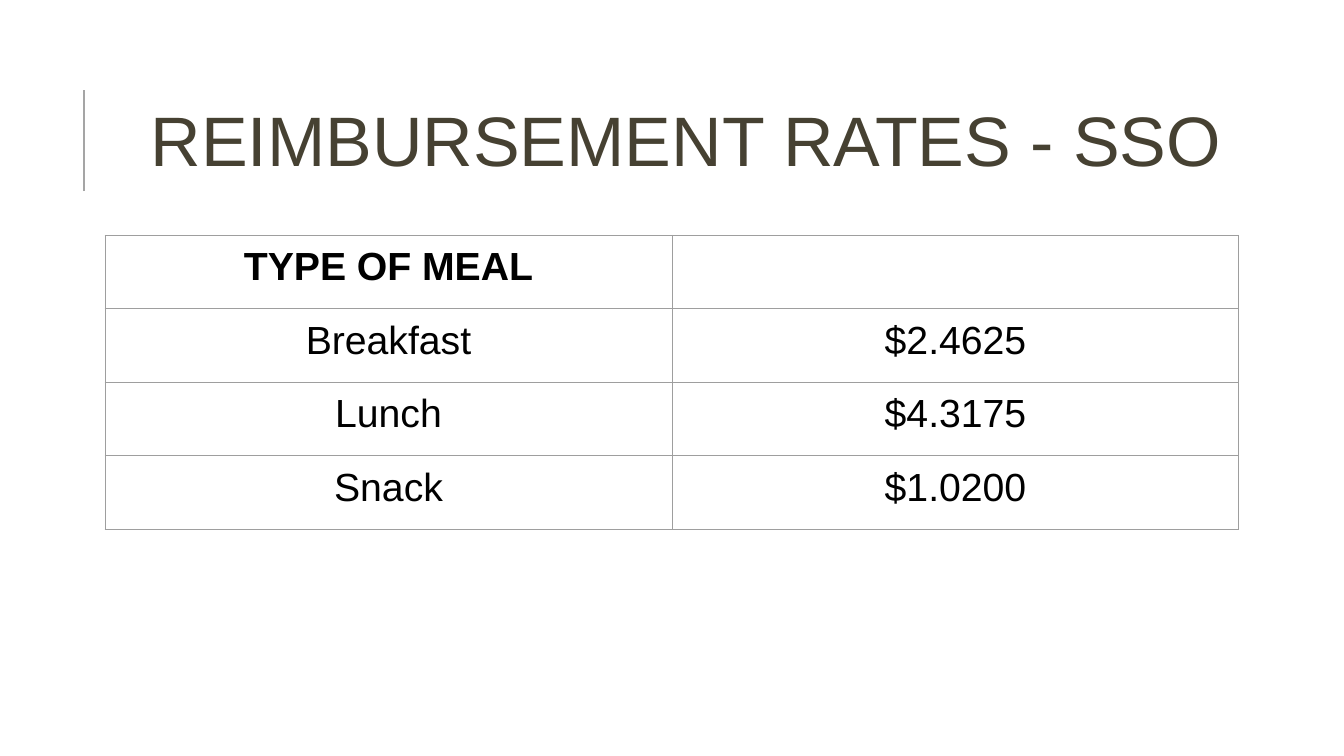
from dataclasses import dataclass
from typing import Any, NamedTuple

import pptx
import pptx.dml.color
import pptx.enum.shapes
import pptx.enum.text
import pptx.oxml
import pptx.oxml.ns
import pptx.util

PX = 9525  # EMU in one px, 96 px to the inch


@dataclass(frozen=True)
class Theme:
    font: str = "Arial"
    title_color: str = "464132"
    text_color: str = "000000"
    accent_color: str = "A5A5A5"
    border_color: str = "9E9E9E"
    title_size: float = 50
    table_size: float = 28
    accent_width: float = 1.75
    border_width: float = 0.75


class MealRate(NamedTuple):
    meal: str
    rate: str
    bold: bool = False


THEME = Theme()
MEAL_RATES = [
    MealRate("TYPE OF MEAL", "", bold=True),
    MealRate("Breakfast", "$2.4625"),
    MealRate("Lunch", "$4.3175"),
    MealRate("Snack", "$1.0200"),
]
COLUMN_WIDTH, ROW_HEIGHT = 540, 70


def px(length: int) -> pptx.util.Emu:
    return pptx.util.Emu(length * PX)


def rgb(color: str) -> pptx.dml.color.RGBColor:
    return pptx.dml.color.RGBColor.from_string(color)


def apply_format(target: Any, values: dict[str, Any]) -> None:
    for name, value in values.items():
        setattr(target, name, value)


def style_font(font: Any, size: float, color: str, bold: bool = False) -> None:
    apply_format(font, {"name": THEME.font, "size": pptx.util.Pt(size), "bold": bold})
    font.color.rgb = rgb(color)


def add_accent_line(slide: Any) -> None:
    accent = slide.shapes.add_connector(
        pptx.enum.shapes.MSO_CONNECTOR.STRAIGHT, px(80), px(182), px(80), px(86))
    accent.line.color.rgb = rgb(THEME.accent_color)
    accent.line.width = pptx.util.Pt(THEME.accent_width)
    accent._element.spPr.append(pptx.oxml.parse_xml(
        f'<a:effectLst {pptx.oxml.ns.nsdecls("a")}/>'))


def add_title(slide: Any, wording: str) -> None:
    title = slide.shapes.add_textbox(px(134), px(61), px(1107), px(157))
    apply_format(title.text_frame, {
        "word_wrap": True,
        "vertical_anchor": pptx.enum.text.MSO_ANCHOR.MIDDLE,
    })
    heading = title.text_frame.paragraphs[0]
    apply_format(heading, {"text": wording, "line_spacing": 0.8})
    style_font(heading.runs[0].font, THEME.title_size, THEME.title_color)


def add_borders(cell: Any) -> None:
    properties = cell._tc.get_or_add_tcPr()
    width = pptx.util.Pt(THEME.border_width)
    for side in ("lnL", "lnR", "lnT", "lnB"):
        properties.append(pptx.oxml.parse_xml(
            f'<a:{side} {pptx.oxml.ns.nsdecls("a")} w="{width}"><a:solidFill>'
            f'<a:srgbClr val="{THEME.border_color}"/></a:solidFill></a:{side}>'))


def fill_cell(cell: Any, wording: str, bold: bool) -> None:
    margins = ("margin_left", "margin_top", "margin_right", "margin_bottom")
    apply_format(cell, dict.fromkeys(margins, pptx.util.Inches(0.1)))
    add_borders(cell)
    cell.fill.background()
    entry = cell.text_frame.paragraphs[0]
    apply_format(entry, {"text": wording, "alignment": pptx.enum.text.PP_ALIGN.CENTER})
    style_font(entry.font, THEME.table_size, THEME.text_color, bold)
    for run in entry.runs:
        style_font(run.font, THEME.table_size, THEME.text_color, bold)


def add_rate_table(slide: Any, meal_rates: list[MealRate]) -> None:
    rates = slide.shapes.add_table(
        len(meal_rates), 2, px(100), px(224),
        px(2 * COLUMN_WIDTH), px(len(meal_rates) * ROW_HEIGHT)).table
    apply_format(rates, {"first_row": False, "horz_banding": False})
    for row, meal_rate in enumerate(meal_rates):
        for column, wording in enumerate((meal_rate.meal, meal_rate.rate)):
            fill_cell(rates.cell(row, column), wording, meal_rate.bold)


def main() -> None:
    deck = pptx.Presentation()
    apply_format(deck, {"slide_width": px(1280), "slide_height": px(720)})
    slide = deck.slides.add_slide(deck.slide_layouts[6])
    add_accent_line(slide)
    add_title(slide, "REIMBURSEMENT RATES - SSO")
    add_rate_table(slide, MEAL_RATES)
    deck.save("out.pptx")


if __name__ == "__main__":
    main()
